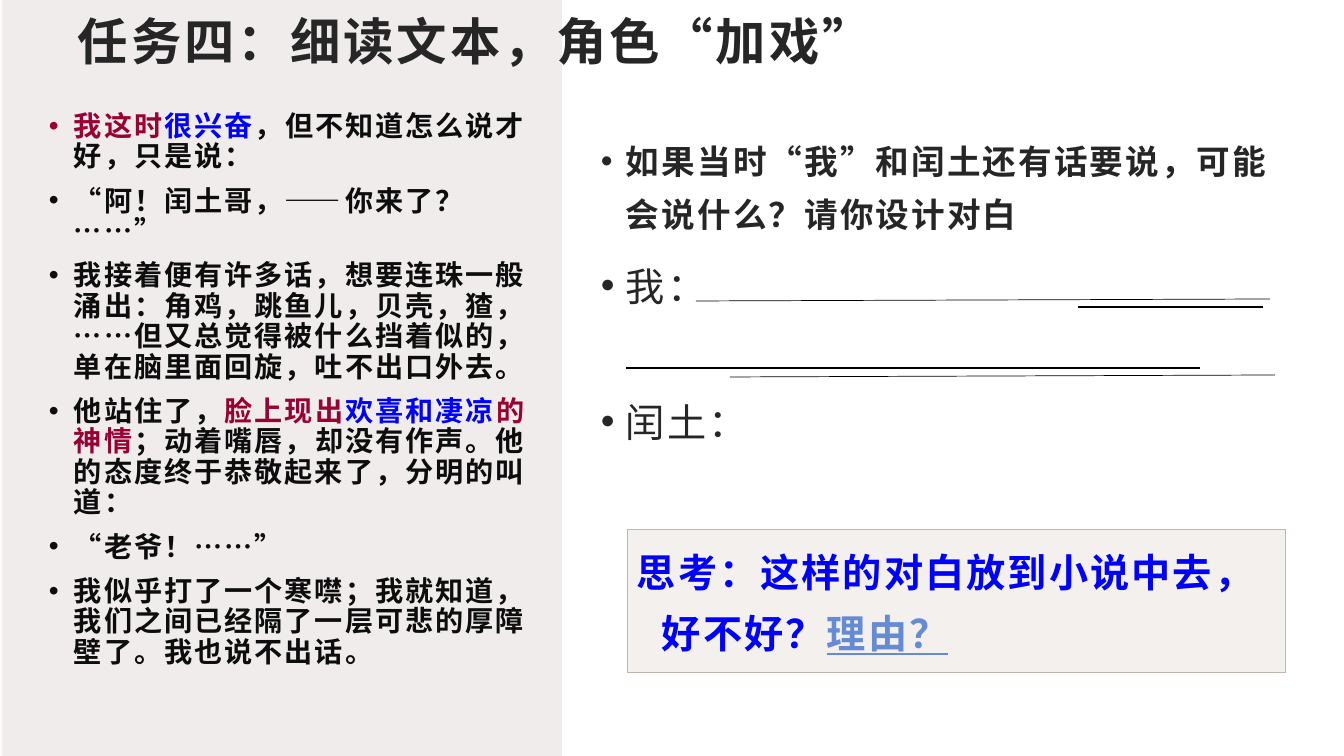
from lxml import etree
from pptx import Presentation
from pptx import util as u
from pptx.dml.color import RGBColor
from pptx.enum import shapes, text
from pptx.oxml.ns import qn

PX = 914400 / 100.8  # EMU in one px
FONT = "Arial"
WHITE = RGBColor(0xFF, 0xFF, 0xFF)
PANEL = RGBColor(0xEF, 0xEC, 0xEB)
CARD = RGBColor(0xF3, 0xF0, 0xEE)
CARD_EDGE = RGBColor(0xC4, 0xB3, 0xAC)
BLACK = RGBColor(0, 0, 0)
INK = RGBColor(0x0D, 0x0D, 0x0D)
DARK = RGBColor(0x26, 0x26, 0x26)
RED = RGBColor(0x99, 0x00, 0x33)
BLUE = RGBColor(0x00, 0x00, 0xFF)
SOFT_BLUE = RGBColor(0x65, 0x8B, 0xD5)

STORY = [
    [("我这时", RED), ("很兴奋", BLUE), ("，但不知道怎么说才好，只是说：", INK)],
    [("“阿！闰土哥，——你来了？……”", INK)],
    [("我接着便有许多话，想要连珠一般涌出：角鸡，跳鱼儿，贝壳，猹，"
      "……但又总觉得被什么挡着似的，单在脑里面回旋，吐不出口外去。", INK)],
    [("他站住了，", INK), ("脸上现出", RED), ("欢喜和凄凉", BLUE), ("的神情", RED),
     ("；动着嘴唇，却没有作声。他的态度终于恭敬起来了，分明的叫道：", INK)],
    [("“老爷！……”", INK)],
    [("我似乎打了一个寒噤；我就知道，我们之间已经隔了一层可悲的厚障壁了。"
      "我也说不出话。", INK)],
]


def px(n):
    return u.Emu(round(n * PX))


def add_rect(slide, box, fill, edge=None):
    rect = slide.shapes.add_shape(shapes.MSO_SHAPE.RECTANGLE, *map(px, box))
    rect.shadow.inherit = False
    rect.fill.solid()
    rect.fill.fore_color.rgb = fill
    if edge is None:
        rect.line.fill.background()
    else:
        rect.line.color.rgb = edge
        rect.line.width = u.Pt(0.5)
    return rect


def add_rule(slide, start, end, width):
    rule = slide.shapes.add_connector(
        shapes.MSO_CONNECTOR.STRAIGHT, *map(px, start + end))
    rule.line.color.rgb = BLACK
    rule.line.width = u.Pt(width)
    etree.SubElement(rule._element.spPr, qn("a:effectLst"))


def add_frame(slide, box, insets=(11, 0, 9, 0), anchor=text.MSO_ANCHOR.TOP):
    frame = slide.shapes.add_textbox(*map(px, box)).text_frame
    frame.word_wrap = True
    frame.vertical_anchor = anchor
    (frame.margin_left, frame.margin_top,
     frame.margin_right, frame.margin_bottom) = map(px, insets)
    return frame


def write(frame, runs, size, bold=True, spacing=1.5, line=None, after=0,
          indent=0, bullet=False, underlined=()):
    """Add one paragraph of (words, colour) runs, reusing an empty first one."""
    first = frame.paragraphs[0]
    paragraph = frame.add_paragraph() if first.runs else first
    paragraph.alignment = text.PP_ALIGN.LEFT
    props = paragraph._p.get_or_add_pPr()
    props.set("marL", str(px(indent)))
    props.set("indent", str(-px(indent)))
    if bullet:
        etree.SubElement(props, qn("a:buFont"), typeface=FONT)
        etree.SubElement(props, qn("a:buChar"), char="•")
    if line:
        paragraph.line_spacing = line
    paragraph.space_after = u.Pt(after)
    for words, colour in runs:
        run = paragraph.add_run()
        run.text = words
        run.font.name = FONT
        run.font.size = u.Pt(size)
        run.font.bold = bold
        run.font.color.rgb = colour
        if words in underlined:
            run.font.underline = True
        run_props = run._r.get_or_add_rPr()
        run_props.set("lang", "zh-CN")
        run_props.set("spc", str(round(spacing * 100)))


def add_title(slide, box):
    frame = add_frame(slide, box, (11, 4, 8, 4), text.MSO_ANCHOR.MIDDLE)
    write(frame, [("任务四：细读文本，角色“加戏”", DARK)], 36, spacing=2)


def add_story(slide, box):
    left, top, width, height = box
    add_rect(slide, box, PANEL)
    frame = add_frame(slide, (left + 36, top + 112, width - 48, height - 145))
    for runs in STORY:
        write(frame, runs, 20.1, line=0.9, after=10, indent=25, bullet=True)


def add_dialogue(slide, box):
    """Question and two speakers, with rules to write on."""
    left, top, width, height = box
    frame = add_frame(slide, box)
    layout = dict(line=1.3, indent=25, bullet=True)
    write(frame, [("如果当时“我”和闰土还有话要说，可能会说什么？请你设计对白", DARK)],
          24, after=10, **layout)
    # The space after this speaker leaves room for a second writing line.
    write(frame, [("我：", DARK)], 28, bold=False, after=53.5, **layout)
    write(frame, [("闰土：", DARK)], 28, bold=False, after=10, **layout)
    rules = [(140, 248, 685, 246, 0.5), (106, 172, 680, 170, 0.5),
             (488, 178, 673, 178, 1.5), (36, 239, 610, 239, 1.5)]
    for x1, y1, x2, y2, weight in rules:
        add_rule(slide, (left + x1, top + y1), (left + x2, top + y2), weight)


def add_reflection(slide, box):
    frame = add_rect(slide, box, CARD, CARD_EDGE).text_frame
    frame.word_wrap = True
    frame.vertical_anchor = text.MSO_ANCHOR.TOP
    write(frame, [("思考：这样的对白放到小说中去，好不好？", BLUE), ("理由？", SOFT_BLUE)],
          28, line=1.3, after=10, indent=25, underlined=("理由？",))


def main():
    deck = Presentation()
    deck.slide_width, deck.slide_height = px(1344), px(756)
    slide = deck.slides.add_slide(deck.slide_layouts[6])
    slide.background.fill.solid()
    slide.background.fill.fore_color.rgb = WHITE
    add_story(slide, (2, 0, 560, 756))
    add_dialogue(slide, (590, 129, 691, 320))
    add_reflection(slide, (627, 529, 658, 143))
    add_title(slide, (67, 0, 1061, 80))
    deck.save("out.pptx")


if __name__ == "__main__":
    main()
